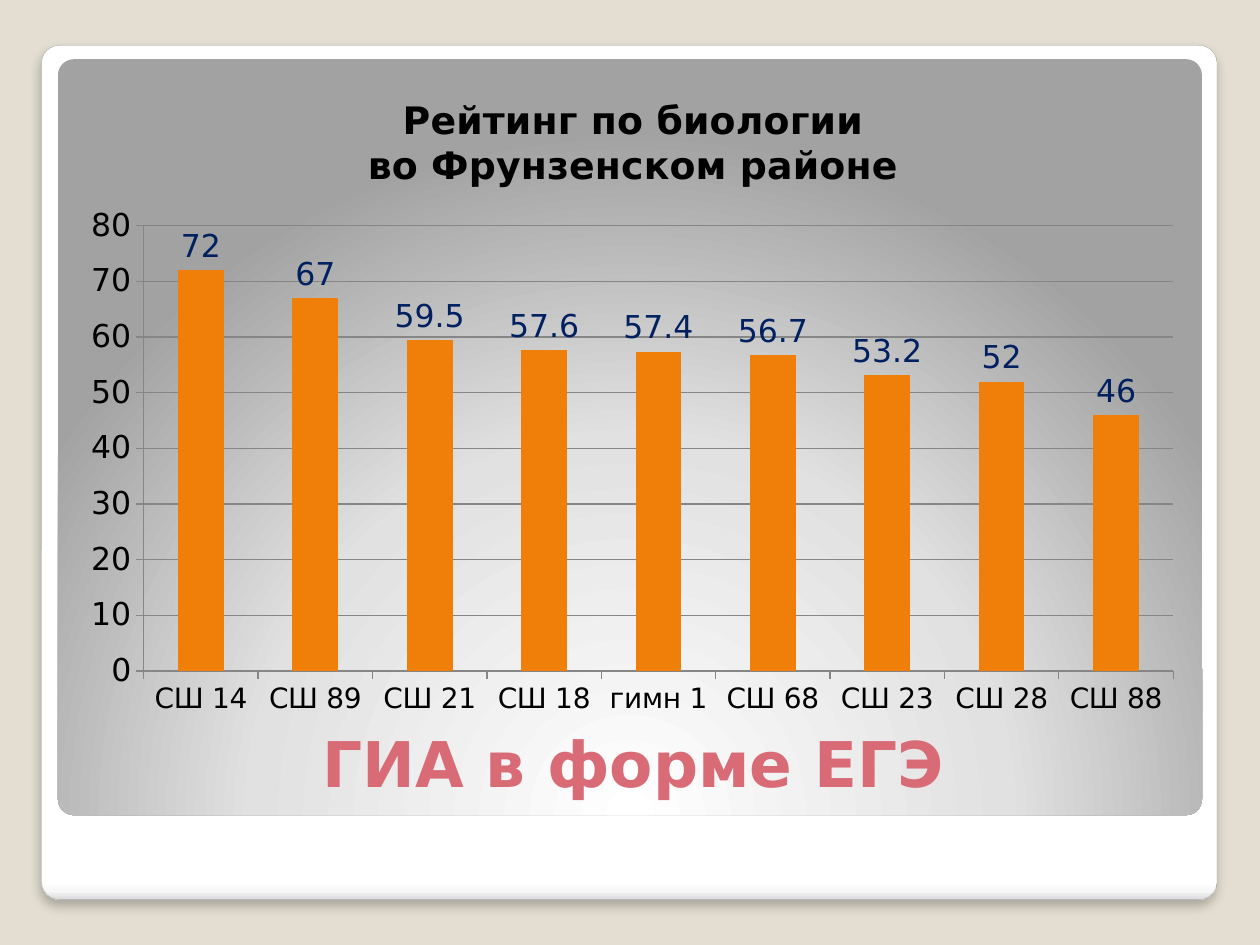
"""Builds the slide with the biology exam rating of the district's schools."""
import pptx
import pptx.chart.data
import pptx.dml.color
import pptx.enum.chart
import pptx.enum.shapes
import pptx.enum.text
import pptx.oxml
import pptx.oxml.ns
import pptx.util

RGBColor = pptx.dml.color.RGBColor
Inches, Pt = pptx.util.Inches, pptx.util.Pt

FONT = "DejaVu Sans"
BEIGE = RGBColor(0xE3, 0xDE, 0xD1)
EDGE = RGBColor(0xA4, 0xA4, 0xA4)
ROSE = RGBColor(0xD9, 0x6B, 0x77)
ORANGE = RGBColor(0xF0, 0x7F, 0x09)
NAVY = RGBColor(0x00, 0x20, 0x60)
BLACK = RGBColor(0, 0, 0)
GREY = RGBColor(0x86, 0x86, 0x86)

TITLE = "ГИА в форме ЕГЭ"
CHART_TITLE = ["Рейтинг по биологии", "во Фрунзенском районе"]
SCORES = {
    "СШ 14": 72, "СШ 89": 67, "СШ 21": 59.5, "СШ 18": 57.6, "гимн 1": 57.4,
    "СШ 68": 56.7, "СШ 23": 53.2, "СШ 28": 52, "СШ 88": 46,
}

LEFT, WIDTH = 0.55, 8.95
CARD_AREA = (0.33, 0.36, 9.33, 6.78)
PANEL_AREA = (0.46, 0.47, 9.08, 6)
TITLE_AREA = (LEFT, 5.23, WIDTH, 1.17)
CHART_AREA = (LEFT, 0.58, WIDTH, 5.2)
PLOT_SHARES = {"x": 0.066, "y": 0.233, "w": 0.913, "h": 0.68}

CARD_STOPS = [(0, "FFFFFF"), (98, "FFFFFF"), (99, "F7F7F7"), (100, "DADADA")]
PANEL_STOPS = [(0, "FFFFFF"), (55, "E1E1E1"), (100, "A2A2A2")]
DOWNWARD = '<a:lin ang="5400000" scaled="0"/>'
FROM_BELOW = ('<a:path path="circle"><a:fillToRect l="50000" t="175000" '
              'r="50000" b="-75000"/></a:path>')
CARD_SHADOW = ('<a:outerShdw blurRad="76200" dist="50800" dir="5400000" algn="tl" '
               'rotWithShape="0"><a:srgbClr val="000000"><a:alpha val="25000"/>'
               '</a:srgbClr></a:outerShdw>')


def drawing_xml(tag, content):
    return pptx.oxml.parse_xml(
        f'<a:{tag} {pptx.oxml.ns.nsdecls("a")}>{content}</a:{tag}>')


def add_panel(page, area, stops, direction):
    panel = page.shapes.add_shape(
        pptx.enum.shapes.MSO_SHAPE.ROUNDED_RECTANGLE, *map(Inches, area))
    panel.adjustments[0] = 0.021
    panel.shadow.inherit = False
    panel.line.fill.background()
    panel.fill.gradient()
    stop_xml = "".join(f'<a:gs pos="{share * 1000}"><a:srgbClr val="{color}"/></a:gs>'
                       for share, color in stops)
    properties = panel._element.spPr
    properties.replace(properties.find(pptx.oxml.ns.qn("a:gradFill")),
                       drawing_xml("gradFill", f"<a:gsLst>{stop_xml}</a:gsLst>{direction}"))
    return panel


def style_font(font, size, color, bold=False):
    font.name, font.size, font.bold = FONT, Pt(size), bold
    font.color.rgb = color


def add_title(page):
    title = page.shapes.title
    title.left, title.top, title.width, title.height = map(Inches, TITLE_AREA)
    frame = title.text_frame
    frame.text = TITLE
    frame.auto_size = pptx.enum.text.MSO_AUTO_SIZE.NONE
    frame.vertical_anchor = pptx.enum.text.MSO_ANCHOR.BOTTOM
    para = frame.paragraphs[0]
    para.alignment = pptx.enum.text.PP_ALIGN.CENTER
    style_font(para.runs[0].font, 36, ROSE, True)
    title._element.getparent().append(title._element)


def style_axis(axis, size):
    style_font(axis.tick_labels.font, size, BLACK)
    axis.major_tick_mark = pptx.enum.chart.XL_TICK_MARK.OUTSIDE
    axis.format.line.color.rgb = GREY
    axis.format.line.width = Pt(0.75)


def place_plot(chart):
    shares = "".join(f'<c:{side} val="{share}"/>' for side, share in PLOT_SHARES.items())
    layout = pptx.oxml.parse_xml(
        f'<c:layout {pptx.oxml.ns.nsdecls("c")}><c:manualLayout>'
        '<c:layoutTarget val="inner"/><c:xMode val="edge"/><c:yMode val="edge"/>'
        f'{shares}</c:manualLayout></c:layout>')
    plot_area = chart._chartSpace.chart.plotArea
    for old in plot_area.findall(pptx.oxml.ns.qn("c:layout")):
        plot_area.remove(old)
    plot_area.insert(0, layout)


def add_rating_chart(page):
    data = pptx.chart.data.CategoryChartData()
    data.categories = list(SCORES)
    data.add_series("Series 1", list(SCORES.values()))
    chart = page.shapes.add_chart(
        pptx.enum.chart.XL_CHART_TYPE.COLUMN_CLUSTERED,
        *map(Inches, CHART_AREA), data).chart
    style_font(chart.font, 18, BLACK)
    chart.has_legend = False

    frame = chart.chart_title.text_frame
    frame.text = "\n".join(CHART_TITLE)
    for para in frame.paragraphs:
        style_font(para.runs[0].font, 21.6, BLACK, True)
    chart.chart_title.include_in_layout = False

    style_axis(chart.category_axis, 16)
    values = chart.value_axis
    style_axis(values, 18)
    values.minimum_scale, values.maximum_scale, values.major_unit = 0, 80, 10
    values.has_major_gridlines = True
    values.major_gridlines.format.line.color.rgb = GREY
    values.major_gridlines.format.line.width = Pt(0.75)

    plot = chart.plots[0]
    plot.gap_width = 150
    plot.vary_by_categories = False
    series = plot.series[0]
    series.format.fill.solid()
    series.format.fill.fore_color.rgb = ORANGE
    labels = series.data_labels
    labels.show_value = True
    labels.position = pptx.enum.chart.XL_LABEL_POSITION.OUTSIDE_END
    style_font(labels.font, 18, NAVY)
    place_plot(chart)


def main():
    deck = pptx.Presentation()
    deck.slide_width, deck.slide_height = Inches(10), Inches(7.5)
    page = deck.slides.add_slide(deck.slide_layouts[5])
    page.background.fill.solid()
    page.background.fill.fore_color.rgb = BEIGE

    card = add_panel(page, CARD_AREA, CARD_STOPS, DOWNWARD)
    card.line.color.rgb = EDGE
    card.line.width = Pt(0.16)
    properties = card._element.spPr
    properties.replace(properties.find(pptx.oxml.ns.qn("a:effectLst")),
                       drawing_xml("effectLst", CARD_SHADOW))
    add_panel(page, PANEL_AREA, PANEL_STOPS, FROM_BELOW)
    add_title(page)
    add_rating_chart(page)
    deck.save("out.pptx")


if __name__ == "__main__":
    main()
